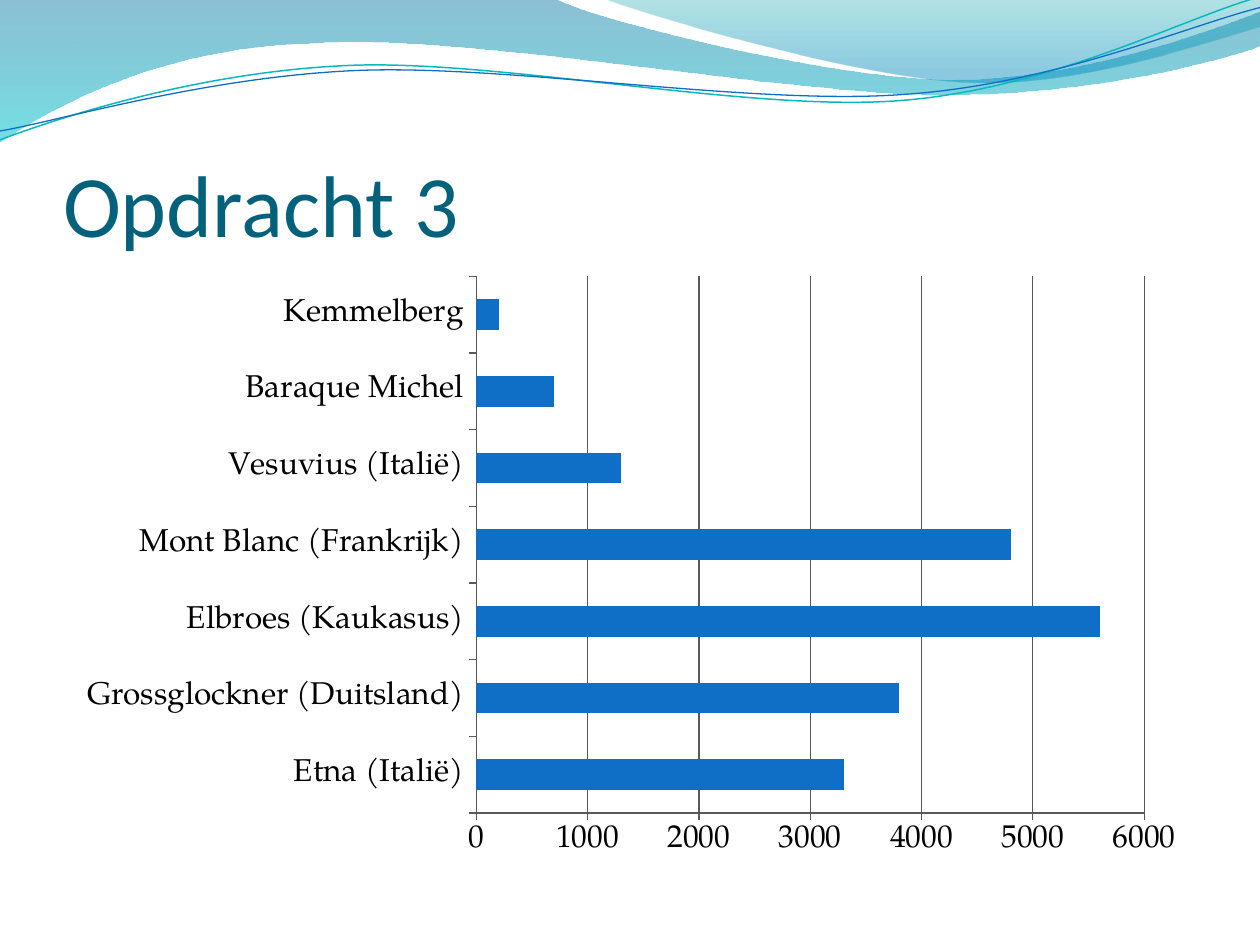
from lxml import etree
from pptx import Presentation
from pptx import util as u
from pptx.chart.data import CategoryChartData
from pptx.dml.color import RGBColor
from pptx.enum import chart as c, text
from pptx.oxml.ns import qn

INCH = 2.54
colors = {
    "title": "04617B", "bar": "0F6FC6", "label": "000000", "axis": "595959",
    "deep": "0074A1", "cyan": "00C6CF", "teal": "00A1A9", "sky": "008BBF",
    "teal line": "0AB8BF", "blue line": "0F6FC6",
}


def rgb(name):
    return RGBColor.from_string(colors[name])


def draw_path(shapes, start, segments, close):
    numbers = start + sum(segments, ())
    points = [(u.Cm(x * INCH), u.Cm(y * INCH)) for x, y in zip(numbers[::2], numbers[1::2])]
    builder = shapes.build_freeform(*points[0], scale=1.0)
    builder.add_line_segments(points[1:], close=close)
    shape = builder.convert_to_shape()
    shape.shadow.inherit = False
    lines = iter(list(shape.element.iter(qn("a:lnTo"))))
    for segment in segments:
        line = next(lines)
        if len(segment) == 6:
            curve = etree.Element(qn("a:cubicBezTo"))
            line.addprevious(curve)
            for part in (line, next(lines), next(lines)):
                curve.append(part[0])
                part.getparent().remove(part)
    return shape


presentation = Presentation()
presentation.slide_width = u.Cm(25.4)
presentation.slide_height = u.Cm(19.05)
slide = presentation.slides.add_slide(presentation.slide_layouts[5])

waves = [
    ((0, 0), [(4.4, -0.01), (4.76, 0.17, 6.64, 0.63, 7.58, 0.63),
              (8.53, 0.63, 9.58, 0.26, 10, 0.09), (10.01, 0.36),
              (9.83, 0.44, 8.7, 0.76, 7.46, 0.75), (6.22, 0.75, 3.82, 0.28, 2.57, 0.34),
              (1.29, 0.36, 0.46, 0.83, -0.01, 1.13)],
     [(0, "deep", 45), (1, "cyan", 55)]),
    ((4.79, -0.01), [(5.09, 0.11, 6.82, 0.62, 7.69, 0.65),
                     (8.56, 0.69, 9.61, 0.32, 10, 0.21), (10, 0)],
     [(0, "teal", 30), (0.8, "sky", 45)]),
]
for start, segments, stops in waves:
    wave = draw_path(slide.shapes, start, segments, True)
    wave.line.fill.background()
    wave.fill.gradient()
    wave.fill.gradient_angle = 270
    for stop, (position, color, opacity) in zip(wave.fill.gradient_stops, stops):
        stop.position = position
        stop.color.rgb = rgb(color)
    for node, (position, color, opacity) in zip(wave.element.iter(qn("a:srgbClr")), stops):
        etree.SubElement(node, qn("a:alpha"), val=str(opacity * 1000))

strands = [
    ((0, 1.11), [(0.48, 0.93, 1.58, 0.57, 2.77, 0.52), (3.95, 0.47, 5.93, 0.89, 7.13, 0.8),
                 (8.33, 0.71, 9.38, 0.15, 9.98, -0.02)], "teal line", 0.85),
    ((0, 1.04), [(0.47, 0.96, 1.64, 0.61, 2.83, 0.56), (4.03, 0.51, 5.97, 0.84, 7.17, 0.75),
                 (8.36, 0.67, 9.41, 0.21, 10, 0.06)], "blue line", 0.75),
]
for start, segments, color, width in strands:
    strand = draw_path(slide.shapes, start, segments, False)
    strand.fill.background()
    strand.line.color.rgb = rgb(color)
    strand.line.width = u.Pt(width)

title = slide.shapes.title
title.element.getparent().append(title.element)
title_box = {"left": u.Cm(1.27), "top": u.Cm(1.96), "width": u.Cm(22.86), "height": u.Cm(3.18)}
for name, value in title_box.items():
    setattr(title, name, value)
frame_format = {
    "margin_left": 0, "margin_right": 0, "margin_top": u.Cm(0.13), "margin_bottom": 0,
    "vertical_anchor": text.MSO_ANCHOR.BOTTOM, "word_wrap": True,
    "auto_size": text.MSO_AUTO_SIZE.NONE,
}
for name, value in frame_format.items():
    setattr(title.text_frame, name, value)
title.text_frame.text = "Opdracht 3"
paragraph = title.text_frame.paragraphs[0]
paragraph.alignment = text.PP_ALIGN.LEFT
for name, value in {"name": "Calibri", "size": u.Pt(50), "bold": False}.items():
    setattr(paragraph.runs[0].font, name, value)
paragraph.runs[0].font.color.rgb = rgb("title")

heights = {
    "Etna (Italië)": 3300,
    "Grossglockner (Duitsland)": 3800,
    "Elbroes (Kaukasus)": 5600,
    "Mont Blanc (Frankrijk)": 4800,
    "Vesuvius (Italië)": 1300,
    "Baraque Michel": 700,
    "Kemmelberg": 200,
}
data = CategoryChartData()
data.categories = list(heights)
data.add_series("Series 1", list(heights.values()))
chart = slide.shapes.add_chart(c.XL_CHART_TYPE.BAR_CLUSTERED, u.Cm(1.3), u.Cm(5.33),
                               u.Cm(22.86), u.Cm(12.19), data).chart
chart.has_legend = False
chart.has_title = False
for name, value in {"name": "TeX Gyre Pagella", "size": u.Pt(18)}.items():
    setattr(chart.font, name, value)
chart.font.color.rgb = rgb("label")

plot = chart.plots[0]
plot.gap_width = 150
plot.vary_by_categories = False
bars = plot.series[0].format.fill
bars.solid()
bars.fore_color.rgb = rgb("bar")

value_format = {"minimum_scale": 0, "maximum_scale": 6000, "major_unit": 1000,
                "has_major_gridlines": True}
for name, value in value_format.items():
    setattr(chart.value_axis, name, value)
for axis in (chart.category_axis, chart.value_axis):
    axis.major_tick_mark = c.XL_TICK_MARK.OUTSIDE
for line in (chart.category_axis.format.line, chart.value_axis.format.line,
             chart.value_axis.major_gridlines.format.line):
    line.color.rgb = rgb("axis")
    line.width = u.Pt(0.75)

presentation.save("out.pptx")
